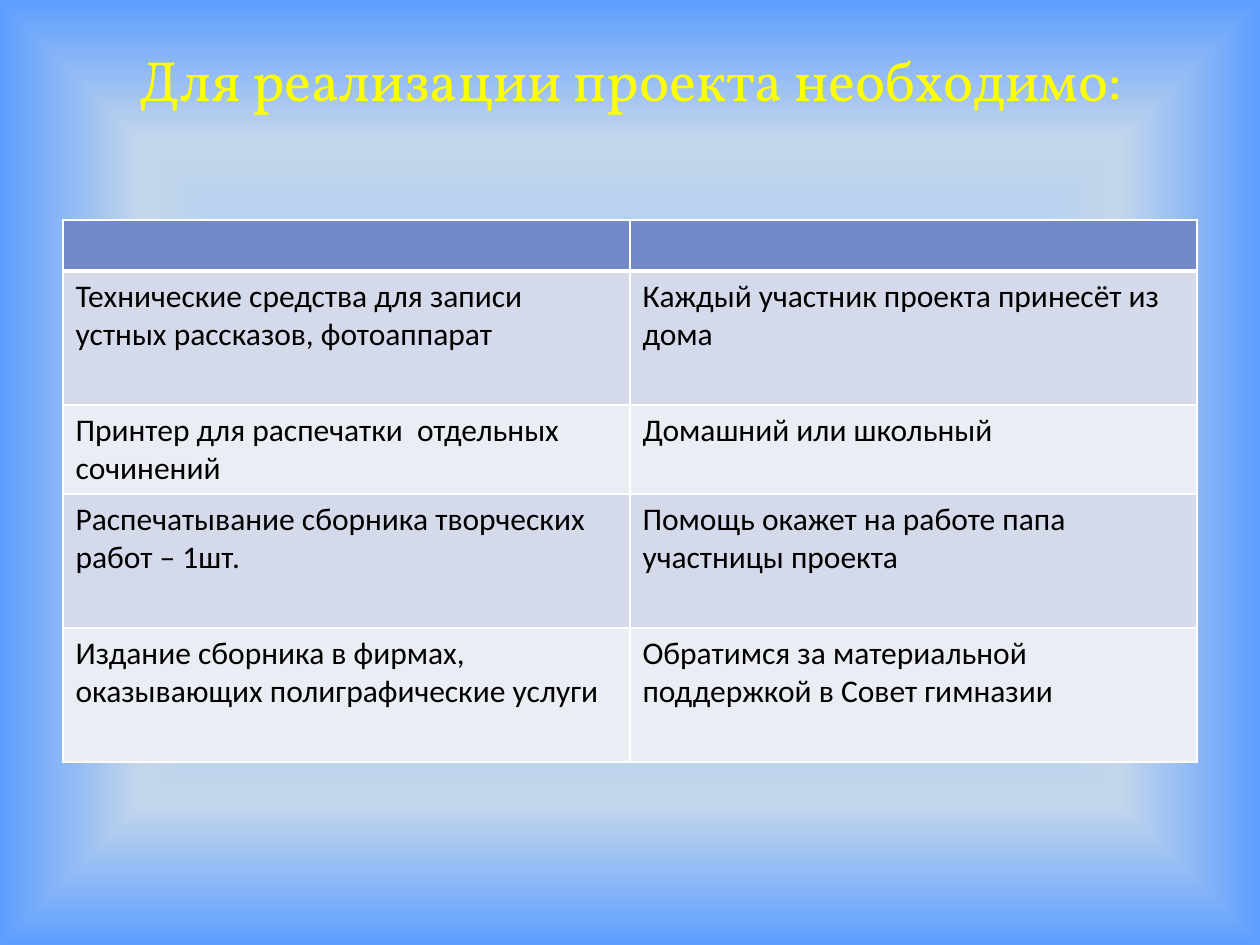
import pptx
import pptx.util
import pptx.oxml
import pptx.oxml.ns
from pptx.dml.color import RGBColor
from pptx.enum.text import MSO_ANCHOR, PP_ALIGN

PX = 914400 // 126  # EMU in one px
YELLOW = RGBColor(0xFF, 0xFF, 0x00)
BLACK = RGBColor(0x00, 0x00, 0x00)
WHITE = RGBColor(0xFF, 0xFF, 0xFF)
HEAD = RGBColor(0x73, 0x8A, 0xC8)
DARK = RGBColor(0xD5, 0xDA, 0xEB)
LIGHT = RGBColor(0xEB, 0xED, 0xF5)
INNER = RGBColor(0x85, 0xC2, 0xFF)
MIDDLE = RGBColor(0xC4, 0xD6, 0xEB)
OUTER = RGBColor(0x5E, 0x9E, 0xFF)
NS = pptx.oxml.ns.nsdecls("a")


def write(frame, text, font="Calibri", size=18, color=BLACK, align=PP_ALIGN.LEFT):
    para = frame.paragraphs[0]
    para.alignment = align
    if text:
        para.add_run().text = text
    para.font.name = font
    para.font.size = pptx.util.Pt(size)
    para.font.color.rgb = color
    for run in para.runs:
        run.font.name = font
        run.font.size = pptx.util.Pt(size)
        run.font.color.rgb = color


def edge(cell, side, width):
    cell._tc.get_or_add_tcPr().append(pptx.oxml.parse_xml(
        f'<a:{side} {NS} w="{pptx.util.Pt(width)}"><a:solidFill>'
        f'<a:srgbClr val="{WHITE}"/></a:solidFill></a:{side}>'))


deck = pptx.Presentation()
deck.slide_width = 1260 * PX
deck.slide_height = 945 * PX
slide = deck.slides.add_slide(deck.slide_layouts[6])

# Background: gradient from the centre to the edges
back = slide.background.fill
back.gradient()
old = slide.background._cSld.bg.bgPr[0]
stops = "".join(
    f'<a:gs pos="{pos * 1000}"><a:srgbClr val="{color}"/></a:gs>'
    for pos, color in [(0, INNER), (70, MIDDLE), (100, OUTER)])
old.getparent().replace(old, pptx.oxml.parse_xml(
    f'<a:gradFill {NS} rotWithShape="1"><a:gsLst>{stops}</a:gsLst><a:path path="shape">'
    '<a:fillToRect l="50000" t="50000" r="50000" b="50000"/></a:path></a:gradFill>'))

# Title
title = slide.shapes.add_textbox(64 * PX, 0, 1134 * PX, 158 * PX)
title.text_frame.word_wrap = True
title.text_frame.vertical_anchor = MSO_ANCHOR.MIDDLE
write(title.text_frame, "Для реализации проекта необходимо:",
      font="Vollkorn", size=32.4, color=YELLOW, align=PP_ALIGN.CENTER)

# Table of needs and how they are met
rows = [
    (51, "", ""),
    (134, "Технические средства для записи устных рассказов, фотоаппарат",
     "Каждый участник проекта принесёт из дома"),
    (89, "Принтер для распечатки  отдельных сочинений", "Домашний или школьный"),
    (134, "Распечатывание сборника творческих работ – 1шт.",
     "Помощь окажет на работе папа участницы проекта"),
    (134, "Издание сборника в фирмах, оказывающих полиграфические услуги",
     "Обратимся за материальной поддержкой в Совет гимназии"),
]
tall = sum(row[0] for row in rows)
table = slide.shapes.add_table(
    len(rows), 2, 63 * PX, 220 * PX, 1134 * PX, tall * PX).table
for r, (high, *texts) in enumerate(rows):
    table.rows[r].height = high * PX
    for c, text in enumerate(texts):
        cell = table.cell(r, c)
        write(cell.text_frame, text)
        for side in ("lnL", "lnR", "lnT", "lnB"):
            edge(cell, side, 3 if r == 0 and side == "lnB" else 1)
        cell.fill.solid()
        cell.fill.fore_color.rgb = HEAD if r == 0 else DARK if r % 2 else LIGHT

deck.save("out.pptx")
